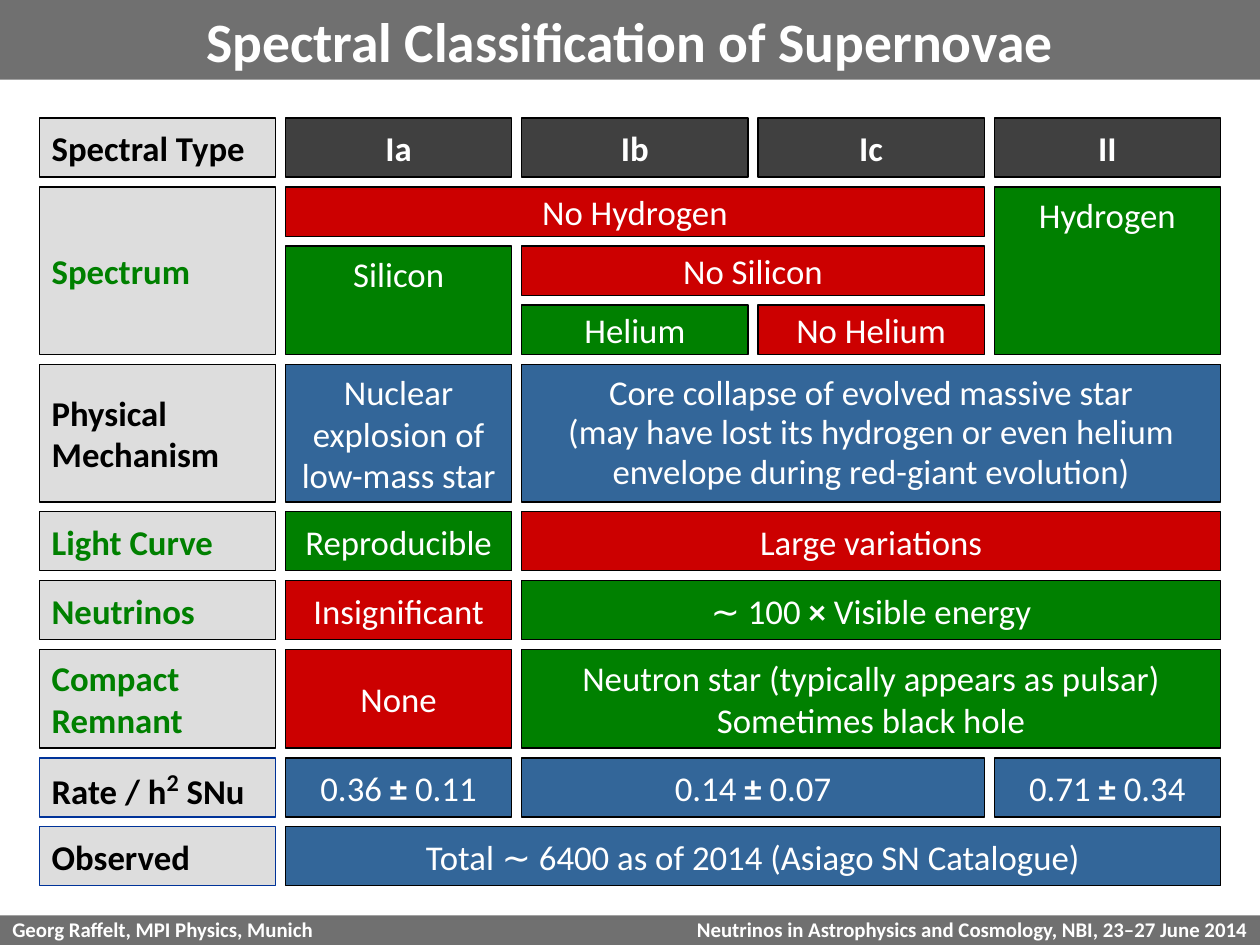
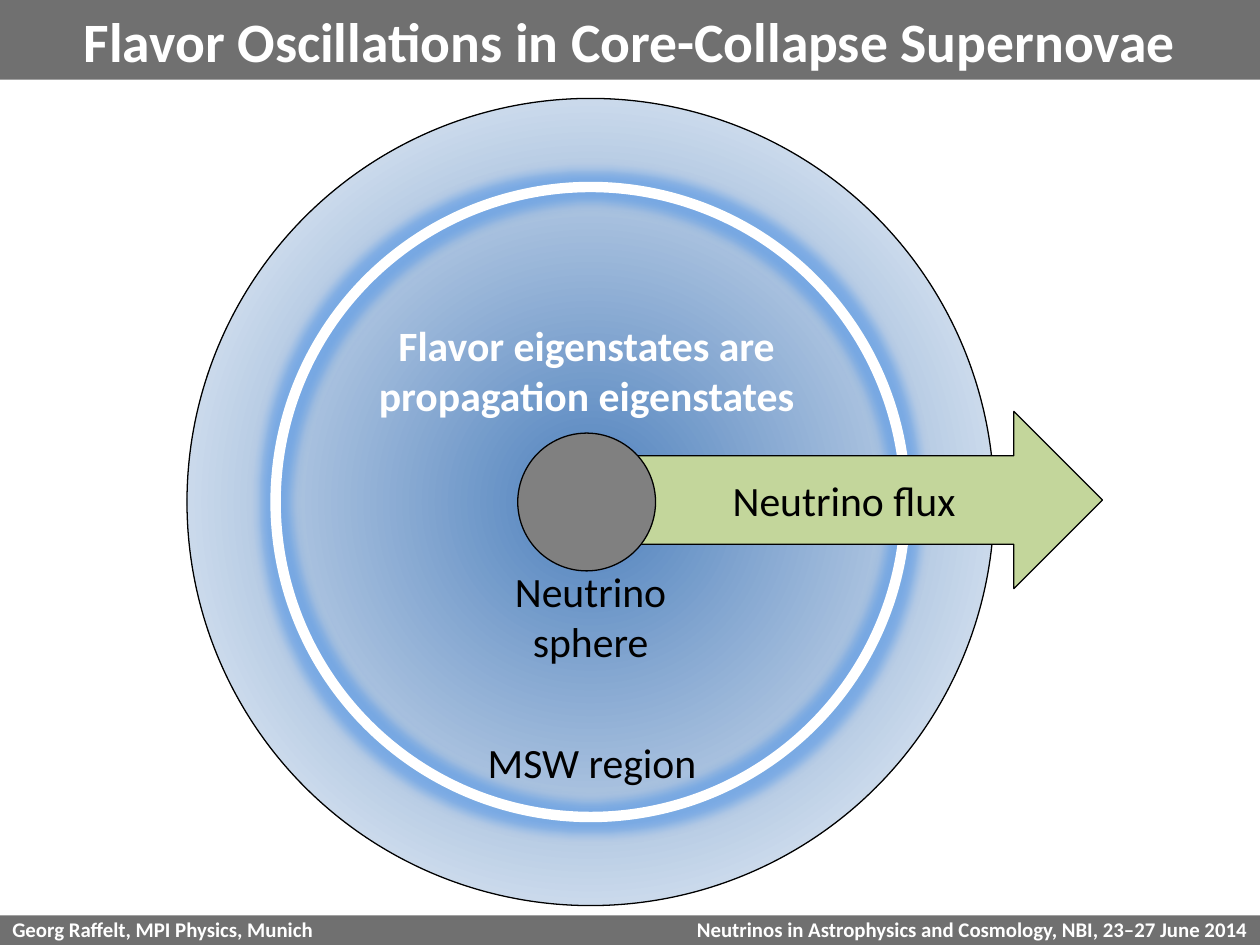
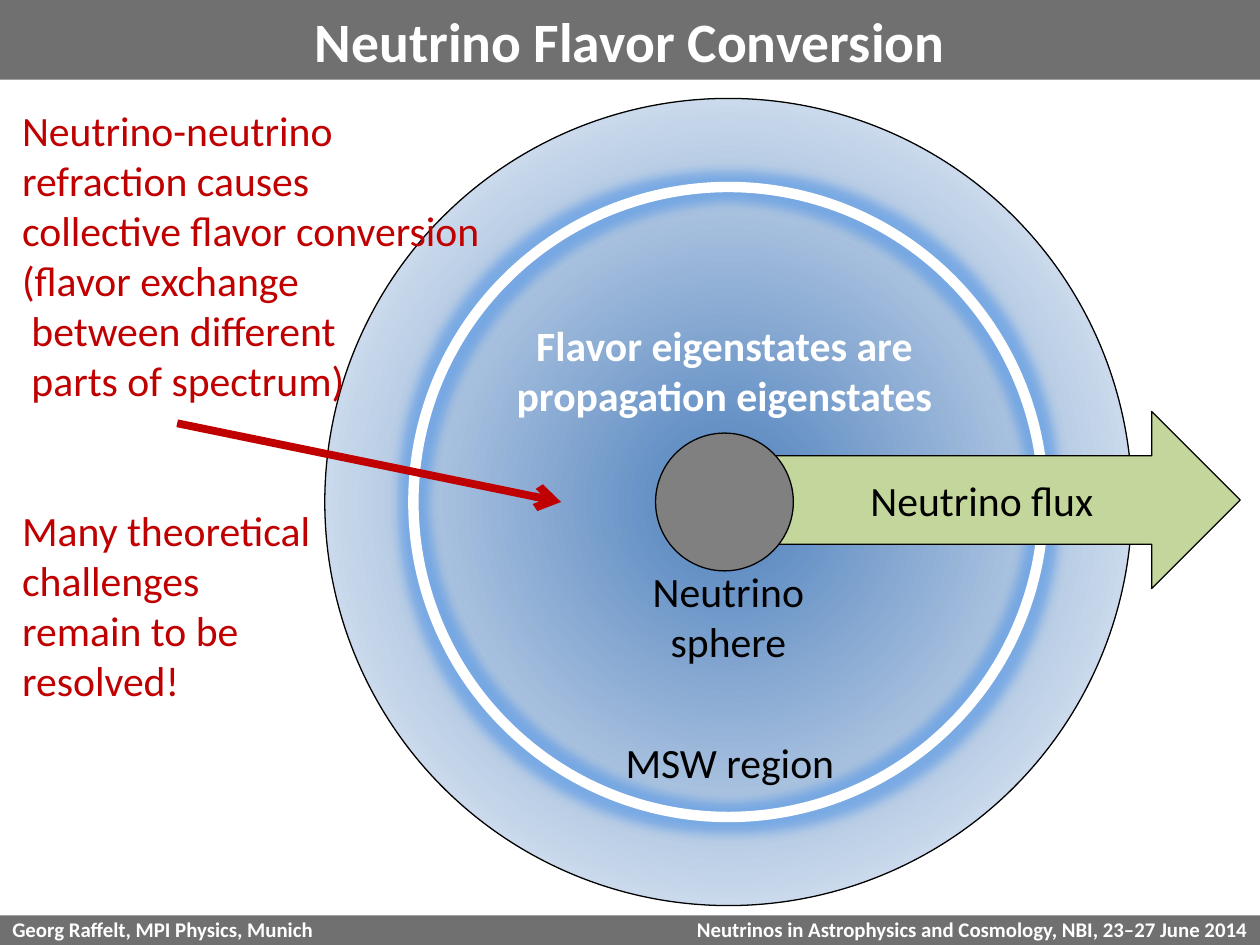
from itertools import accumulate

from lxml import etree
from pptx import Presentation
from pptx.dml.color import RGBColor
from pptx.enum.shapes import MSO_CONNECTOR, MSO_SHAPE
from pptx.enum.text import MSO_ANCHOR, MSO_AUTO_SIZE, PP_ALIGN
from pptx.oxml import parse_xml
from pptx.oxml.ns import qn
from pptx.util import Cm, Pt

RECT, OVAL, ARROW = MSO_SHAPE.RECTANGLE, MSO_SHAPE.OVAL, MSO_SHAPE.RIGHT_ARROW
LEFT, CENTER, RIGHT = PP_ALIGN.LEFT, PP_ALIGN.CENTER, PP_ALIGN.RIGHT
TOP, MIDDLE = MSO_ANCHOR.TOP, MSO_ANCHOR.MIDDLE
STRAIGHT, NO_FIT = MSO_CONNECTOR.STRAIGHT, MSO_AUTO_SIZE.NONE

FONT = "Calibri"
WIDTH, HEIGHT = 25.6, 19.2
TITLE_H, FOOTER_H = 1.62, 0.6
C = {
    "band": "707070", "white": "FFFFFF", "black": "000000", "label": "DDDDDD",
    "head": "404040", "green": "008000", "red": "CC0000", "blue": "336699",
    "navy": "003399", "star": "4F81BD", "flux": "C3D69B", "core": "808080",
    "note": "C00000",
}
A_NS = 'xmlns:a="http://schemas.openxmlformats.org/drawingml/2006/main"'

GAP = 0.2
COL_WIDTHS = [4.8, 4.6, 4.6, 4.6, 4.6]
ROW_HEIGHTS = [1.2, 1, 1, 1, 2.8, 1.2, 1.2, 2, 1.2, 1.2]


def rgb(name):
    return RGBColor.from_string(C[name])


def cm_box(x, y, w, h):
    return Cm(x), Cm(y), Cm(w), Cm(h)


def set_text(shape, paragraphs, size=24, color="black", bold=False, align=CENTER,
             anchor=MIDDLE, spacing=None, bottom=0.13):
    tf = shape.text_frame
    tf.word_wrap = True
    tf.auto_size = NO_FIT
    tf.vertical_anchor = anchor
    tf.margin_left = tf.margin_right = Cm(0.25)
    tf.margin_top, tf.margin_bottom = Cm(0.13), Cm(bottom)
    for i, runs in enumerate(paragraphs):
        p = tf.paragraphs[0] if i == 0 else tf.add_paragraph()
        p.alignment = align
        if spacing:
            p.line_spacing = spacing
        for run in [runs] if isinstance(runs, str) else runs:
            text, fmt = (run, {}) if isinstance(run, str) else run
            r = p.add_run()
            r.text = text
            r.font.name = FONT
            r.font.size = Pt(fmt.get("size", size))
            r.font.bold = fmt.get("bold", bold)
            r.font.color.rgb = rgb(color)
            if "baseline" in fmt:
                r._r.get_or_add_rPr().set("baseline", str(fmt["baseline"]))
    return tf


def add_text(s, box, paragraphs, **fmt):
    return set_text(s.shapes.add_textbox(*cm_box(*box)), paragraphs, **fmt)


def add_shape(s, kind, box, fill=None, line="black", weight=0.75):
    sp = s.shapes.add_shape(kind, *cm_box(*box))
    sp.shadow.inherit = False
    if fill:
        sp.fill.solid()
        sp.fill.fore_color.rgb = rgb(fill)
    else:
        sp.fill.background()
    if line:
        sp.line.color.rgb = rgb(line)
        sp.line.width = Pt(weight)
    else:
        sp.line.fill.background()
    return sp


def add_footer(s, layout):
    y = HEIGHT - FOOTER_H
    fmt = {"size": 12, "color": "white", "bold": True, "bottom": 0.18}
    band = add_shape(s, RECT, (0, y, WIDTH, FOOTER_H), "band", None)
    set_text(band, ["Georg Raffelt, MPI Physics, Munich"], align=LEFT, **fmt)
    event = s.shapes.add_textbox(*cm_box(WIDTH / 2, y, WIDTH / 2, FOOTER_H))
    set_text(event, ["Neutrinos in Astrophysics and Cosmology, NBI, 23–27 June 2014"],
             align=RIGHT, **fmt)
    for sp in (band, event):
        layout.shapes.element.append(sp.element)


def add_slide(prs, layout, title):
    s = prs.slides.add_slide(layout)
    sp = s.shapes.title
    sp.left, sp.top, sp.width, sp.height = cm_box(0, 0, WIDTH, TITLE_H)
    sp.fill.solid()
    sp.fill.fore_color.rgb = rgb("band")
    set_text(sp, [title], size=32, color="white", bold=True)
    return s


def add_grid(s, x, y):
    lefts = list(accumulate((w + GAP for w in COL_WIDTHS), initial=x))
    tops = list(accumulate((h + GAP for h in ROW_HEIGHTS), initial=y))

    def cell(col, row, paragraphs, fill, cols=1, rows=1, line="black", **fmt):
        box = (lefts[col], tops[row], lefts[col + cols] - lefts[col] - GAP,
               tops[row + rows] - tops[row] - GAP)
        fmt = {"size": 20, "color": "white", **fmt}
        set_text(add_shape(s, RECT, box, fill, line), paragraphs, **fmt)

    labels = [
        (0, 1, ["Spectral Type"], "black", "black"),
        (1, 3, ["Spectrum"], "green", "black"),
        (4, 1, ["Physical", "Mechanism"], "black", "black"),
        (5, 1, ["Light Curve"], "green", "black"),
        (6, 1, ["Neutrinos"], "green", "black"),
        (7, 1, ["Compact", "Remnant"], "green", "black"),
        (8, 1, [["Rate / h", ("2", {"size": 24, "baseline": 30000}), " SNu"]],
         "black", "navy"),
        (9, 1, ["Observed"], "black", "navy"),
    ]
    for row, rows, paragraphs, color, line in labels:
        cell(0, row, paragraphs, "label", rows=rows, line=line, color=color,
             bold=True, align=LEFT)

    for col, name in enumerate(["Ia", "Ib", "Ic", "II"], 1):
        cell(col, 0, [name], "head", bold=True)

    cell(1, 1, ["No Hydrogen"], "red", cols=3)
    cell(4, 1, ["Hydrogen"], "green", rows=3, anchor=TOP)
    cell(1, 2, ["Silicon"], "green", rows=2, anchor=TOP)
    cell(2, 2, ["No Silicon"], "red", cols=2)
    cell(2, 3, ["Helium"], "green")
    cell(3, 3, ["No Helium"], "red")
    cell(1, 4, ["Nuclear", "explosion of", "low-mass star"], "blue")
    cell(2, 4, ["Core collapse of evolved massive star",
                "(may have lost its hydrogen or even helium",
                "envelope during red-giant evolution)"], "blue", cols=3, spacing=0.95)
    cell(1, 5, ["Reproducible"], "green")
    cell(2, 5, ["Large variations"], "red", cols=3)
    cell(1, 6, ["Insignificant"], "red")
    cell(2, 6, [["∼ 100 ", ("×", {"bold": True}), " Visible energy"]], "green", cols=3)
    cell(1, 7, ["None"], "red")
    cell(2, 7, ["Neutron star (typically appears as pulsar)",
                "Sometimes black hole"], "green", cols=3)
    for col, cols, rate, error in [(1, 1, "0.36", "0.11"), (2, 2, "0.14", "0.07"),
                                   (4, 1, "0.71", "0.34")]:
        cell(col, 8, [[rate + " ", ("± ", {"bold": True}), error]], "blue", cols=cols)
    cell(1, 9, ["Total ∼ 6400 as of 2014 (Asiago SN Catalogue)"], "blue", cols=4)


def set_radial_fill(sp, inner, outer):
    old = sp.element.spPr.find(qn("a:noFill"))
    old.getparent().replace(old, parse_xml(
        f'<a:gradFill {A_NS} rotWithShape="1"><a:gsLst>'
        f'<a:gs pos="0"><a:srgbClr val="{C[inner]}"/></a:gs>'
        f'<a:gs pos="100000"><a:srgbClr val="{C[outer]}"/></a:gs></a:gsLst>'
        '<a:path path="circle"><a:fillToRect l="50000" t="50000" r="50000" b="50000"/>'
        '</a:path></a:gradFill>'))


def add_glow(sp, color, radius):
    sp.element.spPr.find(qn("a:effectLst")).append(parse_xml(
        f'<a:glow {A_NS} rad="{Pt(radius)}"><a:srgbClr val="{C[color]}">'
        '<a:satMod val="175000"/><a:alpha val="40000"/></a:srgbClr></a:glow>'))


def add_star(s, x, y, size=16.4):
    inset = 1.8
    star = add_shape(s, OVAL, (x, y, size, size))
    set_radial_fill(star, "star", "white")
    ring_size = size - 2 * inset
    ring = add_shape(s, OVAL, (x + inset, y + inset, ring_size, ring_size),
                     line="white", weight=6)
    add_glow(ring, "star", 11)
    add_text(s, (x + 5.6, y + 9.25, 5.2, 2.54), ["Neutrino", "sphere"])
    add_text(s, (x + 5.04, y + 12.2, 6.38, 2.54), ["MSW region"])
    flux = add_shape(s, ARROW, (x + 9, y + 6.36, 9.6, 3.6), "flux")
    set_text(flux, ["Neutrino flux"])
    add_shape(s, OVAL, (x + 6.72, y + 6.8, 2.8, 2.8), "core")
    add_text(s, (x + 2.24, y + 3.8, 11.76, 3.43),
             ["Flavor eigenstates are", "propagation eigenstates"],
             color="white", bold=True)


def add_note(s, x, y):
    tf = add_text(s, (x, y, 11, 13.46),
                  ["Neutrino-neutrino", "refraction causes", "collective flavor conversion",
                   "(flavor exchange", "between different", "parts of spectrum)",
                   "Many theoretical", "challenges", "remain to be", "resolved!"],
                  color="note", align=LEFT, anchor=TOP)
    for p in tf.paragraphs[4:6]:
        p._p.get_or_add_pPr().set("marL", str(Cm(0.19)))
    tf.paragraphs[6].space_before = Pt(57.6)

    pointer = s.shapes.add_connector(STRAIGHT, Cm(x + 3.4), Cm(y + 6.6),
                                     Cm(x + 11.2), Cm(y + 8.2))
    pointer.line.color.rgb = rgb("note")
    pointer.line.width = Pt(4.5)
    etree.SubElement(pointer.line._get_or_add_ln(), qn("a:tailEnd"), type="arrow")
    etree.SubElement(pointer.element.spPr, qn("a:effectLst"))


def main():
    prs = Presentation()
    prs.slide_width, prs.slide_height = Cm(WIDTH), Cm(HEIGHT)
    layout = prs.slide_layouts[5]

    s = add_slide(prs, layout, "Spectral Classification of Supernovae")
    add_footer(s, layout)
    add_grid(s, 0.8, 2.4)

    s = add_slide(prs, layout, "Flavor Oscillations in Core-Collapse Supernovae")
    add_star(s, 3.8, 2)

    s = add_slide(prs, layout, "Neutrino Flavor Conversion")
    add_star(s, 6.6, 2)
    add_note(s, 0.2, 2)

    prs.save("out.pptx")


if __name__ == "__main__":
    main()
